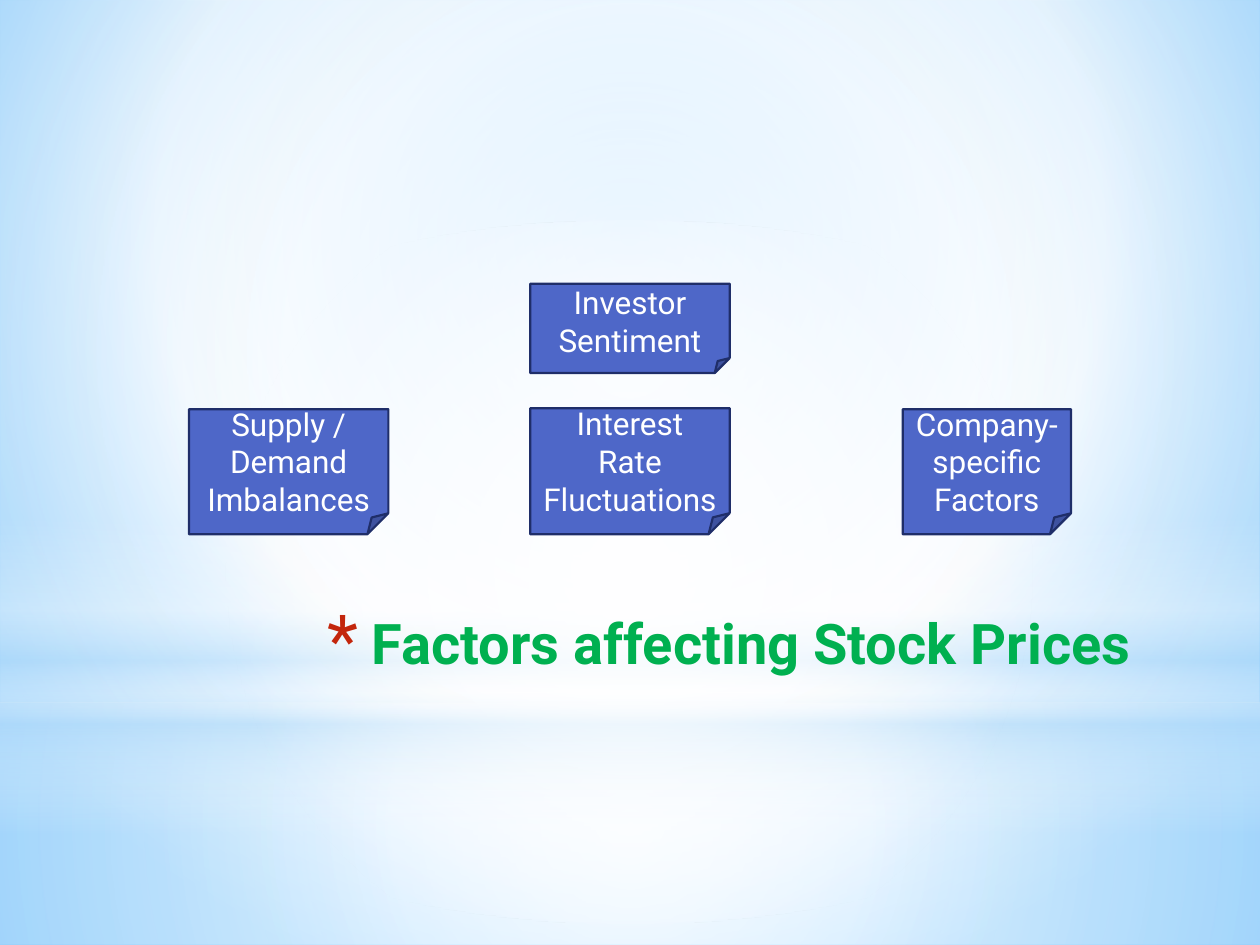
from lxml.etree import SubElement
from pptx import Presentation
from pptx.dml.color import RGBColor
from pptx.enum.shapes import MSO_SHAPE
from pptx.enum.text import MSO_ANCHOR, PP_ALIGN
from pptx.oxml.ns import qn
from pptx.util import Cm, Pt

HUE = {"white": "FFFFFF", "pale": "B4DCFA", "sky": "9ED5FF", "deep": "5BB9FF",
       "note": "4E67C8", "edge": "1F2E69", "title": "00B050", "star": "C3260C"}
FONT = "Roboto"
MID = (50, 50, 50, 50)


def shade(fill, props, stops, focus=None):
    """Gradient of (position, colour, opacity) stops: round with a focus, else downward."""
    fill.gradient()
    grad = props.find(qn("a:gradFill"))
    grad.clear()
    grad.set("rotWithShape", "1")
    row = SubElement(grad, qn("a:gsLst"))
    for pos, name, alpha in stops:
        stop = SubElement(row, qn("a:gs"), pos=str(pos * 1000))
        tint = SubElement(stop, qn("a:srgbClr"), val=HUE[name])
        SubElement(tint, qn("a:alpha"), val=str(alpha * 1000))
    if focus:
        way = SubElement(grad, qn("a:path"), path="circle")
        sides = {side: str(val * 1000) for side, val in zip("ltrb", focus)}
        SubElement(way, qn("a:fillToRect"), **sides)
    else:
        SubElement(grad, qn("a:lin"), ang="5400000", scaled="0")


def write(para, text, size, color, bold=False):
    run = para.add_run()
    run.text = text
    run.font.name = FONT
    run.font.size = Pt(size)
    run.font.bold = bold
    run.font.color.rgb = RGBColor.from_string(HUE[color])


deck = Presentation()
deck.slide_width, deck.slide_height = Cm(25.4), Cm(19.05)
slide = deck.slides.add_slide(deck.slide_layouts[6])

# Background
back = slide.background.fill
back.gradient()
shade(back, slide.element.cSld.bg.bgPr,
      [(0, "sky", 100), (60, "white", 100), (100, "deep", 100)], (20, 10, 20, 60))

# Layers of light: shape, top, height, stops, focus
layers = [
    (MSO_SHAPE.RECTANGLE, 14.17, 4.88,
     [(0, "white", 91), (37, "white", 76), (100, "pale", 79)], MID),
    (MSO_SHAPE.RECTANGLE, 0, 14.17,
     [(0, "white", 89), (48, "white", 62), (100, "pale", 79)], MID),
    (MSO_SHAPE.RECTANGLE, 10.46, 6.35,
     [(0, "white", 0), (29, "white", 30), (45, "pale", 40),
      (55, "white", 26), (65, "pale", 60), (100, "white", 0)], None),
    (MSO_SHAPE.OVAL, 4.45, 14.17, [(0, "white", 100), (56, "white", 0)], MID),
]
for kind, top, high, stops, focus in layers:
    layer = slide.shapes.add_shape(kind, 0, Cm(top), deck.slide_width, Cm(high))
    layer.shadow.inherit = False
    layer.line.fill.background()
    shade(layer.fill, layer.element.spPr, stops, focus)

# Title with a star bullet
box = slide.shapes.add_textbox(Cm(4.98), Cm(12.14), Cm(18.08), Cm(3.18))
box.text_frame.word_wrap = True
box.text_frame.vertical_anchor = MSO_ANCHOR.TOP
para = box.text_frame.paragraphs[0]
para.alignment = PP_ALIGN.RIGHT
write(para, "Factors affecting Stock Prices", 32, "title", True)
props = para._p.get_or_add_pPr()
props.set("marL", str(Cm(0.89)))
props.set("indent", str(-Cm(0.89)))
SubElement(SubElement(props, qn("a:buClr")), qn("a:srgbClr"), val=HUE["star"])
SubElement(props, qn("a:buSzPct"), val="128000")
SubElement(props, qn("a:buFont"), typeface=FONT)
SubElement(props, qn("a:buChar"), char="*")

# Notes: text, left, top, width, height
notes = [
    ("Supply / Demand Imbalances", 3.81, 8.25, 4.02, 2.52),
    ("Interest Rate Fluctuations", 10.69, 8.23, 4.02, 2.54),
    ("Company-specific Factors", 18.2, 8.25, 3.39, 2.52),
    ("Investor Sentiment", 10.69, 5.72, 4.02, 1.8),
]
group = slide.shapes.add_group_shape()
for text, *place in notes:
    note = group.shapes.add_shape(MSO_SHAPE.FOLDED_CORNER, *map(Cm, place))
    note.shadow.inherit = False
    note.fill.solid()
    note.fill.fore_color.rgb = RGBColor.from_string(HUE["note"])
    note.line.color.rgb = RGBColor.from_string(HUE["edge"])
    note.line.width = Pt(1.25)
    frame = note.text_frame
    frame.word_wrap = True
    frame.vertical_anchor = MSO_ANCHOR.MIDDLE
    para = frame.paragraphs[0]
    para.alignment = PP_ALIGN.CENTER
    write(para, text, 18, "white")

deck.save("out.pptx")
